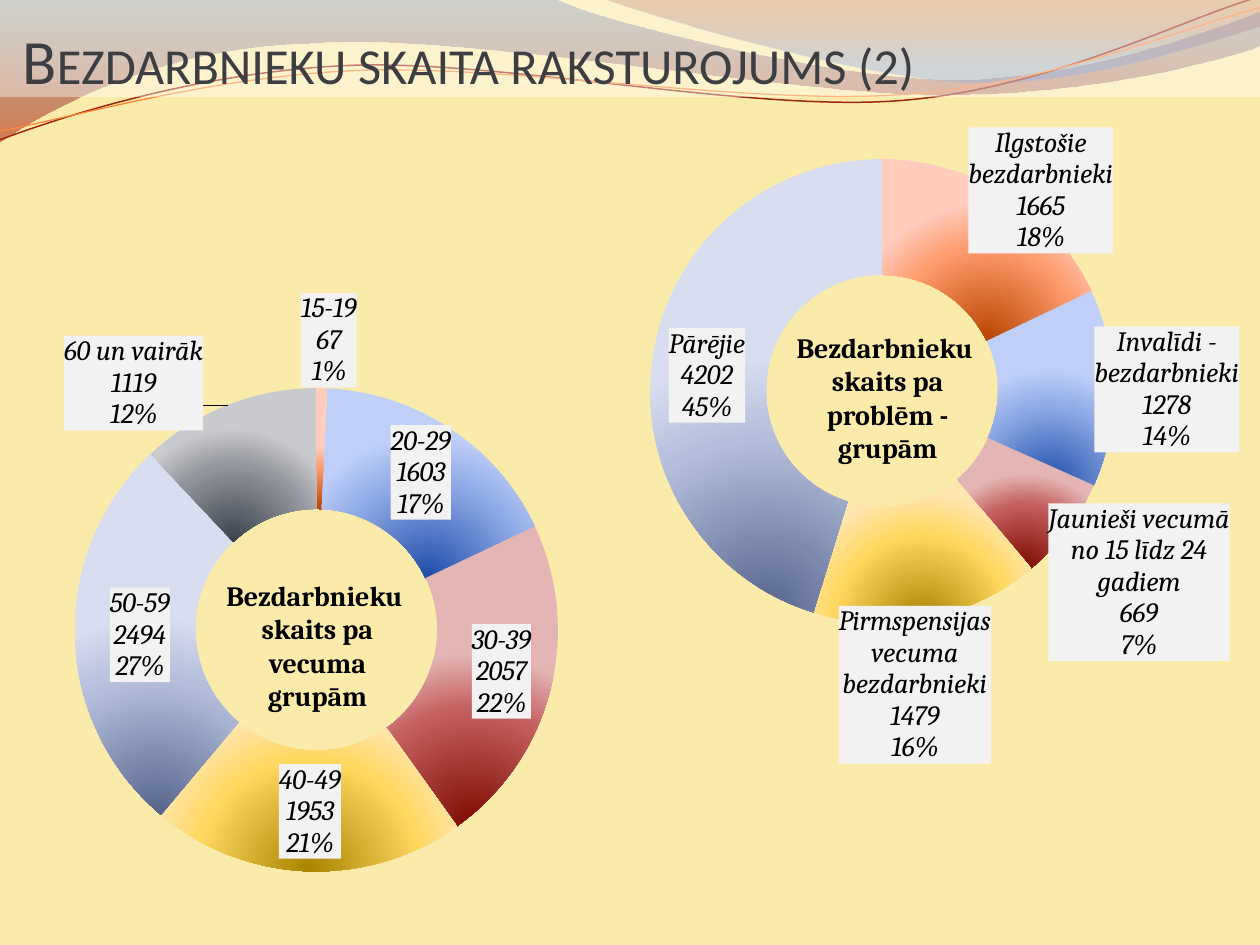
import math
from dataclasses import dataclass

from lxml import etree
from pptx import Presentation
from pptx.chart.data import CategoryChartData
from pptx.dml.color import RGBColor
from pptx.enum import chart as ch, text as tx
from pptx.oxml import parse_xml
from pptx.oxml.ns import nsdecls, qn
from pptx.util import Inches, Pt

COLORS = {
    "page": "FBEBAB", "title": "3C3E42", "white": "FFFFFF", "black": "000000",
    "label": "F2F2F2", "red_line": "9E2713", "orange_line": "FE8637",
}
# dark, middle and light tone of each slice
TONES = [
    ("B84400", "FF9C6E", "FFCCBE"), ("1F4CA8", "8FAAE6", "C0CFF8"),
    ("7C0A00", "C46060", "E4B5B5"), ("A88400", "FFD860", "FFE6B0"),
    ("56648C", "B4BEDB", "D8DDEF"), ("3A424C", "93969C", "C9CACD"),
]


@dataclass
class Slice:
    name: str
    value: int
    label: tuple[float, float]  # label centre on the slide


@dataclass
class Doughnut:
    box: tuple[float, float, float, float]
    plot: tuple[float, float, float, float]  # fractions of the box
    caption: str
    caption_box: tuple[float, float, float, float]
    slices: list[Slice]


@dataclass
class Wave:
    start: tuple[float, float]
    curves: list  # six numbers for a Bezier curve, two for a straight line
    stops: list | None = None  # (position, colour, opacity)
    line: str | None = None
    width: float = 0


WAVES = [
    Wave((0, 0), [(4.4, -0.01), (4.76, 0.17, 6.64, 0.63, 7.58, 0.63),
                  (8.53, 0.63, 9.58, 0.26, 10, 0.09), (10.01, 0.36),
                  (9.83, 0.44, 8.7, 0.76, 7.46, 0.75),
                  (6.22, 0.75, 3.82, 0.28, 2.57, 0.34),
                  (1.29, 0.36, 0.46, 0.83, -0.01, 1.13)],
         stops=[(0, "4F6EA8", 45), (100, "B61A00", 55)]),
    Wave((4.79, -0.01), [(5.09, 0.11, 6.82, 0.62, 7.69, 0.65),
                         (8.56, 0.69, 9.61, 0.32, 10, 0.21), (10, 0)],
         stops=[(0, "951500", 30), (80, "5681D1", 45)]),
    Wave((0, 1.11), [(0.48, 0.93, 1.58, 0.57, 2.77, 0.52),
                     (3.95, 0.47, 5.93, 0.89, 7.13, 0.8),
                     (8.33, 0.71, 9.38, 0.15, 9.98, -0.02)],
         line="red_line", width=0.85),
    Wave((0, 1.04), [(0.47, 0.96, 1.64, 0.61, 2.83, 0.56),
                     (4.03, 0.51, 5.97, 0.84, 7.17, 0.75),
                     (8.36, 0.67, 9.41, 0.21, 10, 0.06)],
         line="orange_line", width=0.75),
]

DOUGHNUTS = [
    Doughnut((1.3, 0.84, 8.54, 5.22), (0.452, 0.081, 0.431, 0.705),
             "Bezdarbnieku \vskaits pa\vproblēm -\ngrupām", (5.47, 2.57, 3.15, 1.18), [
        Slice("Ilgstošie bezdarbnieki", 1665, (8.26, 1.51)),
        Slice("Invalīdi - bezdarbnieki", 1278, (9.26, 3.09)),
        Slice("Jaunieši vecumā no 15 līdz 24 gadiem", 669, (9.04, 4.62)),
        Slice("Pirmspensijas vecuma bezdarbnieki", 1479, (7.26, 5.44)),
        Slice("Pārējie", 4202, (5.61, 2.98))]),
    Doughnut((-0.91, 1.98, 8.03, 5.32), (0.187, 0.207, 0.478, 0.721),
             "Bezdarbnieku \vskaits pa\vvecuma\vgrupām", (1.14, 4.54, 2.76, 1.18), [
        Slice("15-19", 67, (2.61, 2.7)), Slice("20-29", 1603, (3.34, 3.75)),
        Slice("30-39", 2057, (3.98, 5.33)), Slice("40-49", 1953, (2.46, 6.44)),
        Slice("50-59", 2494, (1.11, 5.04)), Slice("60 un vairāk", 1119, (1.06, 3.04))]),
]


def rgb(name: str) -> RGBColor:
    return RGBColor.from_string(COLORS[name])


def gradient(stops: list, direction: str):
    """Gradient fill from (position, colour, opacity) stops, all in percent."""
    gs = "".join(f'<a:gs pos="{pos * 1000}"><a:srgbClr val="{color}">'
                 f'<a:alpha val="{alpha * 1000}"/></a:srgbClr></a:gs>'
                 for pos, color, alpha in stops)
    return parse_xml(f'<a:gradFill {nsdecls("a")} rotWithShape="1">'
                     f'<a:gsLst>{gs}</a:gsLst>{direction}</a:gradFill>')


def replace_fill(format_, fill) -> None:
    """Swap a solid fill for the given fill element."""
    format_.fill.solid()
    solid = format_.fill._xPr.find(qn("a:solidFill"))
    solid.getparent().replace(solid, fill)


def bend_segments(sp, curves: list) -> None:
    """Turn the straight segments that have control points into Bezier curves."""
    segments = sp._element.findall(".//" + qn("a:lnTo"))
    for segment, curve in zip(segments, curves):
        if len(curve) == 6:
            pts = "".join(f'<a:pt x="{Inches(x) - sp.left}" y="{Inches(y) - sp.top}"/>'
                          for x, y in zip(curve[::2], curve[1::2]))
            bend = parse_xml(f'<a:cubicBezTo {nsdecls("a")}>{pts}</a:cubicBezTo>')
            segment.getparent().replace(segment, bend)


def add_wave(slide, wave: Wave) -> None:
    builder = slide.shapes.build_freeform(*map(Inches, wave.start))
    builder.add_line_segments([tuple(map(Inches, curve[-2:])) for curve in wave.curves],
                              close=wave.stops is not None)
    sp = builder.convert_to_shape()
    bend_segments(sp, wave.curves)
    sp.shadow.inherit = False
    if wave.stops:
        replace_fill(sp, gradient(wave.stops, '<a:lin ang="5400000" scaled="0"/>'))
        sp.line.fill.background()
    else:
        sp.fill.background()
        sp.line.color.rgb = rgb(wave.line)
        sp.line.width = Pt(wave.width)


def layout_xml(x: float, y: float, extra: str = "", head: str = "") -> str:
    return (f'<c:layout {nsdecls("c")}><c:manualLayout>{head}<c:x val="{x:.4f}"/>'
            f'<c:y val="{y:.4f}"/>{extra}</c:manualLayout></c:layout>')


def labels_xml(d: Doughnut) -> str:
    """Data labels, each shifted from the middle of its slice to its own place."""
    left, top, width, height = d.box
    px, py, pw, ph = d.plot
    cx, cy = left + (px + pw / 2) * width, top + (py + ph / 2) * height
    ring = 0.75 * min(pw * width, ph * height) / 2
    look = (f'<c:spPr><a:solidFill><a:srgbClr val="{COLORS["label"]}"/></a:solidFill>'
            '<a:ln><a:noFill/></a:ln></c:spPr><c:txPr><a:bodyPr/><a:p><a:pPr>'
            f'<a:defRPr sz="1600" b="0" i="1"><a:solidFill><a:srgbClr val="{COLORS["black"]}"/>'
            '</a:solidFill><a:latin typeface="Cambria"/></a:defRPr></a:pPr>'
            '<a:endParaRPr lang="lv-LV"/></a:p></c:txPr>'
            '<c:showLegendKey val="0"/><c:showVal val="1"/><c:showCatName val="1"/>'
            '<c:showSerName val="0"/><c:showPercent val="1"/><c:showBubbleSize val="0"/>'
            '<c:separator>\n</c:separator>')
    total, before, items = sum(s.value for s in d.slices), 0, ""
    for i, s in enumerate(d.slices):
        angle = 2 * math.pi * (before + s.value / 2) / total
        before += s.value
        dx = (s.label[0] - cx - ring * math.sin(angle)) / width
        dy = (s.label[1] - cy + ring * math.cos(angle)) / height
        items += f'<c:dLbl><c:idx val="{i}"/>{layout_xml(dx, dy)}{look}</c:dLbl>'
    return (f'<c:dLbls {nsdecls("c", "a")}>{items}{look}'
            '<c:showLeaderLines val="1"/></c:dLbls>')


def add_doughnut(slide, d: Doughnut) -> None:
    data = CategoryChartData()
    data.categories = [s.name for s in d.slices]
    data.add_series("Series 1", [s.value for s in d.slices])
    chart = slide.shapes.add_chart(ch.XL_CHART_TYPE.DOUGHNUT, *map(Inches, d.box), data).chart
    chart.has_legend = chart.has_title = False
    chart.font.name, chart.font.size = "Cambria", Pt(16)
    chart.font.color.rgb = rgb("black")
    plot = chart.plots[0]
    plot.vary_by_categories = True
    series = plot.series[0]
    for i, (dark, mid, light) in enumerate(TONES[:len(d.slices)]):
        point = series.points[i].format
        stops = [(0, dark, 100), (68, mid, 100), (100, light, 100)]
        replace_fill(point, gradient(stops, '<a:path path="circle"><a:fillToRect l="50000" '
                                            't="100000" r="50000" b="0"/></a:path>'))
        point.line.fill.background()
    series._element.find(qn("c:cat")).addprevious(parse_xml(labels_xml(d)))

    area = chart._chartSpace.find(".//" + qn("c:plotArea"))
    for old in area.findall(qn("c:layout")):
        area.remove(old)
    x, y, w, h = d.plot
    head = '<c:layoutTarget val="inner"/><c:xMode val="edge"/><c:yMode val="edge"/>'
    area.insert(0, parse_xml(layout_xml(x, y, f'<c:w val="{w}"/><c:h val="{h}"/>', head)))
    area.find(".//" + qn("c:holeSize")).set("val", "50")

    tf = slide.shapes.add_textbox(*map(Inches, d.caption_box)).text_frame
    tf.word_wrap = True
    tf.text = d.caption
    for p in tf.paragraphs:
        p.alignment = tx.PP_ALIGN.CENTER
        p.font.name, p.font.size, p.font.bold = "Cambria", Pt(16), True
        p.font.color.rgb = rgb("black")


def set_title(slide, title: str) -> None:
    sp = slide.shapes.title
    sp.left, sp.top, sp.width, sp.height = map(Inches, (0, 0, 10, 0.77))
    sp.fill.solid()
    sp.fill.fore_color.rgb = rgb("white")
    color = sp._element.spPr.find(".//" + qn("a:srgbClr"))
    etree.SubElement(color, qn("a:alpha")).set("val", "40000")
    tf = sp.text_frame
    tf.text = title
    tf.auto_size = tx.MSO_AUTO_SIZE.NONE
    tf.vertical_anchor = tx.MSO_ANCHOR.BOTTOM
    tf.margin_left, tf.margin_top, tf.margin_right, tf.margin_bottom = map(
        Inches, (0.18, 0.05, 0, 0))
    p = tf.paragraphs[0]
    p.alignment = tx.PP_ALIGN.LEFT
    p.font.name, p.font.size = "Calibri", Pt(36)
    p.font.color.rgb = rgb("title")
    p.runs[0].font._element.set("cap", "small")
    slide.shapes._spTree.append(sp._element)  # in front of the waves


def main() -> None:
    prs = Presentation()
    prs.slide_width, prs.slide_height = Inches(10), Inches(7.5)
    slide = prs.slides.add_slide(prs.slide_layouts[5])
    slide.background.fill.solid()
    slide.background.fill.fore_color.rgb = rgb("page")
    for wave in WAVES:
        add_wave(slide, wave)
    for doughnut in DOUGHNUTS:
        add_doughnut(slide, doughnut)
    set_title(slide, "Bezdarbnieku skaita raksturojums (2)")
    prs.save("out.pptx")


if __name__ == "__main__":
    main()
